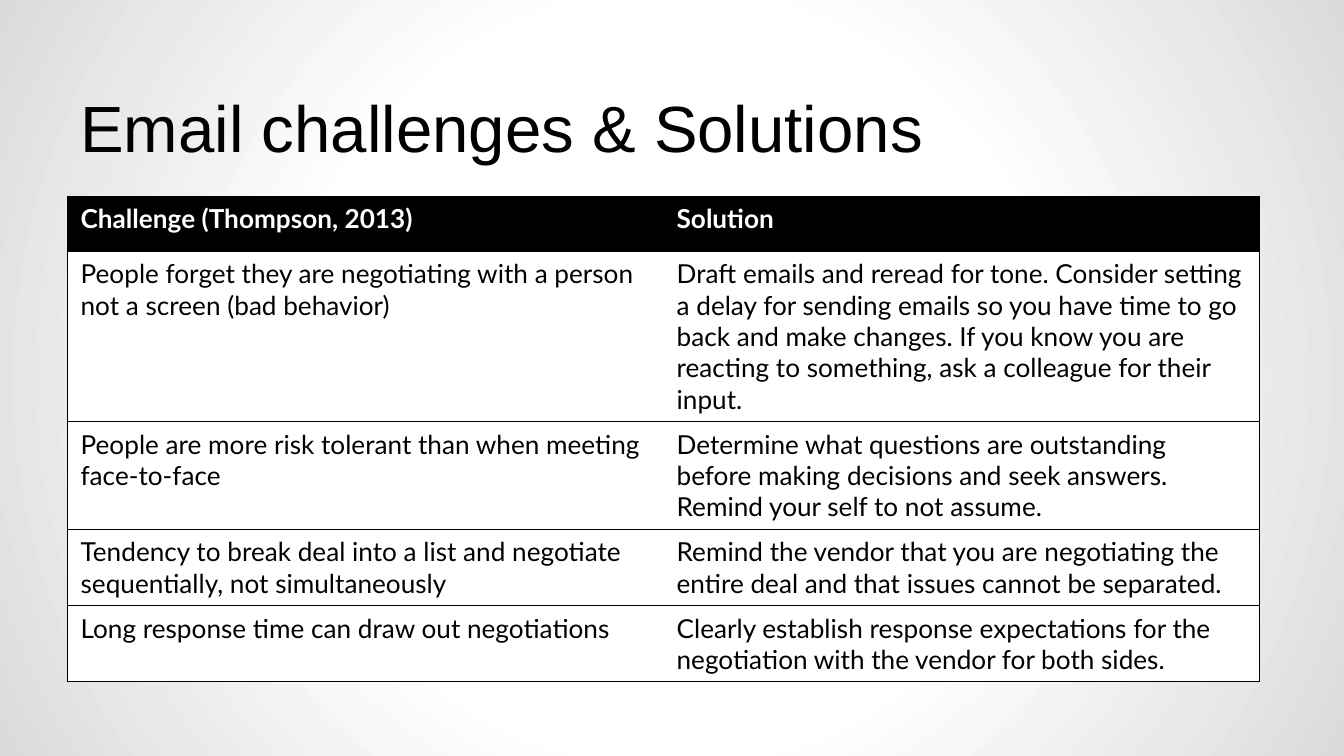
from typing import NamedTuple

from lxml import etree
from pptx import Presentation
from pptx.dml.color import RGBColor
from pptx.enum.text import MSO_ANCHOR, PP_ALIGN
from pptx.oxml.ns import qn
from pptx.util import Inches, Pt

TOP = MSO_ANCHOR.TOP
LEFT = PP_ALIGN.LEFT
BLACK, WHITE, GREY = "000000", "FFFFFF", "DBDBDB"
BLANK_LAYOUT = 6
SLIDE_WIDTH = Inches(10)
SLIDE_HEIGHT = SLIDE_WIDTH * 9 // 16
BORDER_WIDTH = Pt(0.75)


class Advice(NamedTuple):
    challenge: str
    solution: str


HEADING = Advice("Challenge (Thompson, 2013)", "Solution")
ADVICE = [
    Advice("People forget they are negotiating with a person not a screen (bad behavior)",
           "Draft emails and reread for tone. Consider setting a delay for sending emails "
           "so you have time to go back and make changes. If you know you are reacting to "
           "something, ask a colleague for their input."),
    Advice("People are more risk tolerant than when meeting face-to-face",
           "Determine what questions are outstanding before making decisions and seek "
           "answers. Remind your self to not assume."),
    Advice("Tendency to break deal into a list and negotiate sequentially, not simultaneously",
           "Remind the vendor that you are negotiating the entire deal and that issues "
           "cannot be separated."),
    Advice("Long response time can draw out negotiations",
           "Clearly establish response expectations for the negotiation with the vendor "
           "for both sides."),
]


def rgb(color: str) -> RGBColor:
    return RGBColor.from_string(color)


def write(frame, text: str, font_name: str, size: float, color: str, bold: bool = False) -> None:
    paragraph = frame.paragraphs[0]
    paragraph.alignment = LEFT
    run = paragraph.add_run()
    run.text = text
    formats = {"name": font_name, "size": Pt(size), "bold": bold}
    for attribute, value in formats.items():
        setattr(run.font, attribute, value)
    run.font.color.rgb = rgb(color)


def add_color(parent, color: str) -> None:
    etree.SubElement(parent, qn("a:srgbClr"), val=color)


def paint_background(slide) -> None:
    """Fill the slide with a circular gradient from its centre."""
    slide.background.fill.solid()
    properties = slide.element.find(".//" + qn("p:bgPr"))
    gradient = etree.Element(qn("a:gradFill"), rotWithShape="1")
    stops = etree.SubElement(gradient, qn("a:gsLst"))
    for percent, color in [(0, WHITE), (48, WHITE), (100, GREY)]:
        add_color(etree.SubElement(stops, qn("a:gs"), pos=str(percent * 1000)), color)
    circle = etree.SubElement(gradient, qn("a:path"), {"path": "circle"})
    center = {side: "50000" for side in "ltrb"}
    etree.SubElement(circle, qn("a:fillToRect"), center)
    properties.replace(properties.find(qn("a:solidFill")), gradient)


def set_borders(cell, drawn_sides: str) -> None:
    """Draw the given sides of a cell and leave the others open."""
    properties = cell._tc.get_or_add_tcPr()
    for position, side in enumerate("LRTB"):
        line = etree.Element(qn(f"a:ln{side}"), w=str(BORDER_WIDTH))
        if side in drawn_sides:
            add_color(etree.SubElement(line, qn("a:solidFill")), BLACK)
        else:
            etree.SubElement(line, qn("a:noFill"))
        properties.insert(position, line)


def add_title(slide, text: str) -> None:
    box = slide.shapes.add_textbox(Inches(0.5), Inches(0.55), Inches(8.78), Inches(1.4))
    frame = box.text_frame
    margin = Inches(0.1)
    layout = {"word_wrap": True, "vertical_anchor": TOP, "margin_left": margin,
              "margin_right": margin, "margin_top": margin, "margin_bottom": margin}
    for attribute, value in layout.items():
        setattr(frame, attribute, value)
    write(frame, text, "Arial", 35, BLACK)


def add_advice_table(slide, heading: Advice, advice: list[Advice]) -> None:
    lines = [heading, *advice]
    height = Inches(3.84)
    holder = slide.shapes.add_table(len(lines), len(heading), Inches(0.5), Inches(1.46),
                                    Inches(8.87), height)
    table = holder.table
    for row in table.rows:
        row.height = Inches(0.41)  # rows grow with their text
    holder.height = height

    for row_index, line in enumerate(lines):
        is_heading = row_index == 0
        fill, ink = (BLACK, WHITE) if is_heading else (WHITE, BLACK)
        for column, text in enumerate(line):
            cell = table.cell(row_index, column)
            cell.vertical_anchor = TOP
            cell.fill.solid()
            cell.fill.fore_color.rgb = rgb(fill)
            set_borders(cell, "LTB" if column == 0 else "RTB")
            write(cell.text_frame, text, "Lato", 14, ink, bold=is_heading)


def main() -> None:
    presentation = Presentation()
    presentation.slide_width = SLIDE_WIDTH
    presentation.slide_height = SLIDE_HEIGHT
    slide = presentation.slides.add_slide(presentation.slide_layouts[BLANK_LAYOUT])

    # Background, title and table
    paint_background(slide)
    add_title(slide, "Email challenges & Solutions")
    add_advice_table(slide, HEADING, ADVICE)
    presentation.save("out.pptx")


if __name__ == "__main__":
    main()
